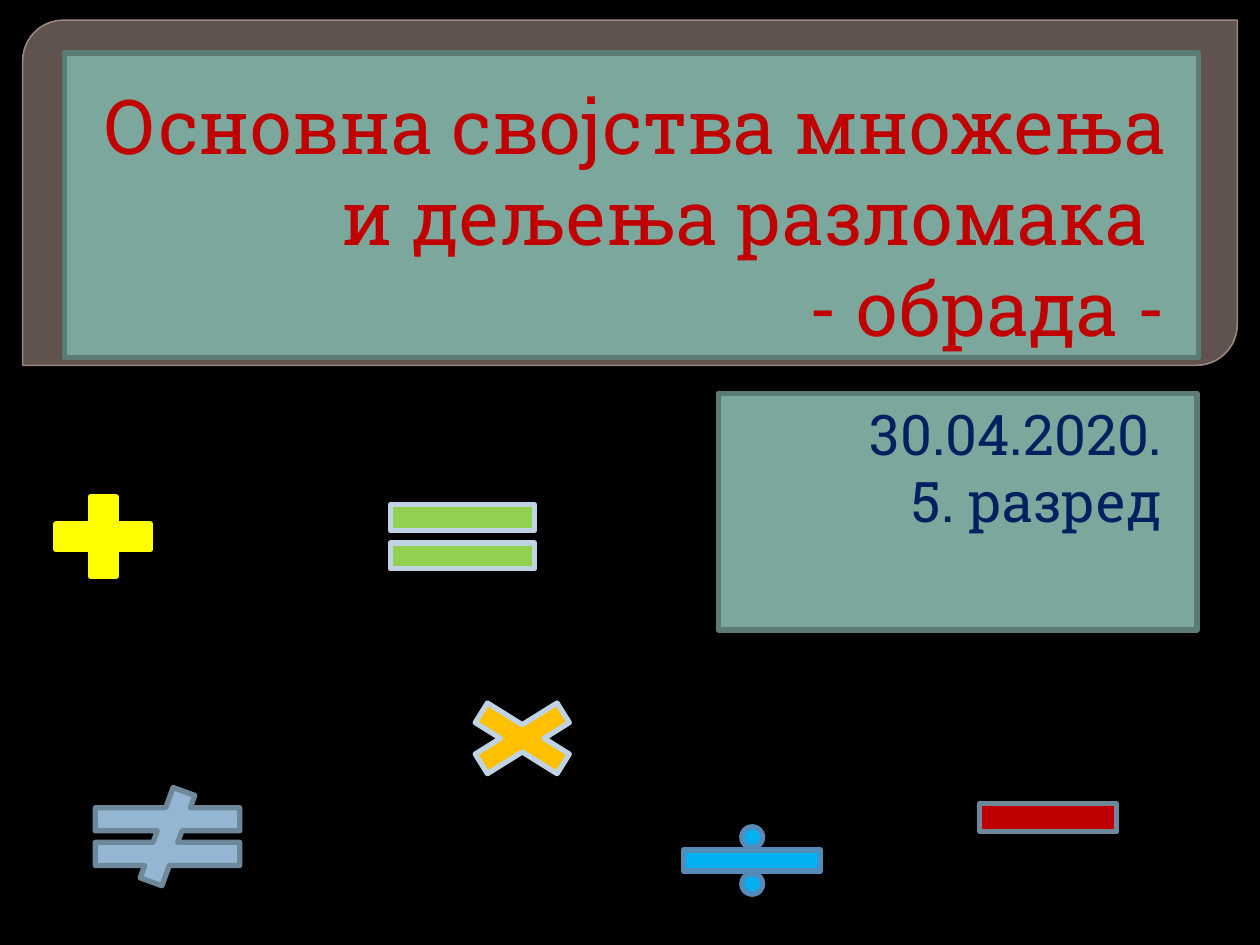
from dataclasses import dataclass

from lxml.etree import SubElement
from pptx import Presentation
from pptx.dml.color import RGBColor
from pptx.enum.shapes import MSO_SHAPE
from pptx.enum.text import MSO_ANCHOR, MSO_AUTO_SIZE, PP_ALIGN
from pptx.oxml.ns import qn
from pptx.util import Inches, Pt


@dataclass(frozen=True)
class Theme:
    """Colours, font and sizes of the slide."""
    font: str = "Roboto Slab"
    title_size: float = 43.2
    subtitle_size: float = 32
    outline: float = 3
    background: str = "000000"
    banner: str = "948079"
    banner_line: str = "A9948D"
    panel: str = "7BA79D"
    panel_line: str = "5B7C74"
    title: str = "C00000"
    subtitle: str = "002060"
    pale_line: str = "BFD3E4"
    slate_line: str = "6D879B"


THEME = Theme()

SYMBOLS = [
    (MSO_SHAPE.MATH_PLUS, (0.31, 3.83, 1.02, 0.86), "FFFF00", "FFFF00"),
    (MSO_SHAPE.MATH_MINUS, (7.58, 6.02, 1.48, 0.94), "C00000", THEME.slate_line),
    (MSO_SHAPE.MATH_EQUAL, (2.89, 3.83, 1.56, 0.86), "92D050", THEME.pale_line),
    (MSO_SHAPE.MATH_NOT_EQUAL, (0.55, 6.25, 1.56, 0.78), "94B6D2", THEME.slate_line),
    (MSO_SHAPE.MATH_MULTIPLY, (3.52, 5.47, 1.25, 0.78), "FFC000", THEME.pale_line),
    (MSO_SHAPE.MATH_DIVIDE, (5.23, 6.48, 1.48, 0.7), "00B0F0", "558BB8"),
]


def paint(shape, fill, line, width=THEME.outline):
    """Give a shape a solid fill and outline."""
    shape.fill.solid()
    shape.fill.fore_color.rgb = RGBColor.from_string(fill)
    shape.line.color.rgb = RGBColor.from_string(line)
    shape.line.width = Pt(width)


def set_opacity(shape, tag, percent):
    """Set the opacity of the fill or line colour below the given tag."""
    parent = shape.element.spPr if tag == "fill" else shape.element.spPr.find(qn("a:ln"))
    color = parent.find(qn("a:solidFill")).find(qn("a:srgbClr"))
    SubElement(color, qn("a:alpha"), val=str(percent * 1000))


def add_preset(page, kind, box):
    """Add a preset shape without a shadow."""
    shape = page.shapes.add_shape(kind, *map(Inches, box))
    shape.shadow.inherit = False
    return shape


def add_banner(page, box):
    """Place the translucent banner behind the title."""
    banner = add_preset(page, MSO_SHAPE.ROUND_2_DIAG_RECTANGLE, box)
    banner.adjustments[0] = 0.118
    banner.adjustments[1] = 0
    paint(banner, THEME.banner, THEME.banner_line, 0.87)
    set_opacity(banner, "fill", 65)
    set_opacity(banner, "line", 88)
    page.shapes.title.element.addprevious(banner.element)


def fill_panel(panel, box, lines, size, color, anchor, right_inset):
    """Move a placeholder into its box and set its right-aligned text."""
    panel.left, panel.top, panel.width, panel.height = map(Inches, box)
    paint(panel, THEME.panel, THEME.panel_line)
    frame = panel.text_frame
    frame.text = lines
    frame.word_wrap = True
    frame.auto_size = MSO_AUTO_SIZE.NONE
    frame.vertical_anchor = anchor
    frame.margin_left = frame.margin_top = frame.margin_bottom = Inches(0.05)
    frame.margin_right = Inches(right_inset)
    for para in frame.paragraphs:
        para.alignment = PP_ALIGN.RIGHT
        para.space_before = Pt(0)
        para.font.name = THEME.font
        para.font.size = Pt(size)
        para.font.color.rgb = RGBColor.from_string(color)


def add_symbols(page):
    """Scatter the arithmetic signs over the lower part."""
    for kind, box, fill, line in SYMBOLS:
        paint(add_preset(page, kind, box), fill, line)


def build_title_slide(deck):
    """Build the lesson's title slide."""
    page = deck.slides.add_slide(deck.slide_layouts[0])
    page.background.fill.solid()
    page.background.fill.fore_color.rgb = RGBColor.from_string(THEME.background)
    add_banner(page, (0.18, 0.16, 9.64, 2.74))
    fill_panel(page.shapes.title, (0.51, 0.42, 9, 2.42),
               "Основна својства множења и дељења разломака \v- обрада -",
               THEME.title_size, THEME.title, MSO_ANCHOR.BOTTOM, 0.25)
    fill_panel(page.placeholders[1], (5.7, 3.12, 3.8, 1.88),
               "30.04.2020.\n5. разред",
               THEME.subtitle_size, THEME.subtitle, MSO_ANCHOR.TOP, 0.27)
    add_symbols(page)


def main():
    """Create and save the deck."""
    deck = Presentation()
    deck.slide_width, deck.slide_height = Inches(10), Inches(7.5)
    build_title_slide(deck)
    deck.save("out.pptx")


if __name__ == "__main__":
    main()
